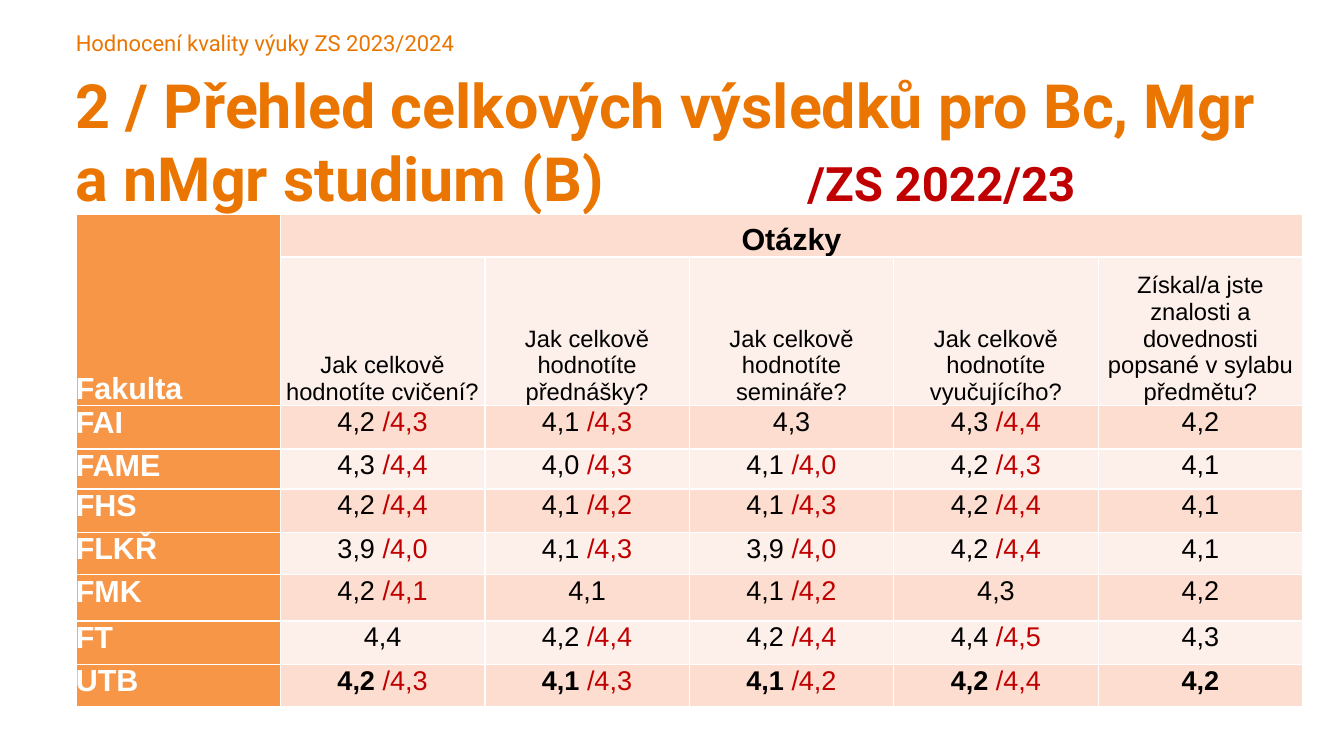
from lxml.etree import SubElement
from pptx import Presentation
from pptx.dml.color import RGBColor
from pptx.enum.text import MSO_ANCHOR as Anchor, MSO_AUTO_SIZE as AutoSize, PP_ALIGN as Align
from pptx.oxml.ns import qn
from pptx.util import Cm, Pt

ORANGE = RGBColor(0xEA, 0x75, 0x00)
RED = RGBColor(0xC0, 0x00, 0x00)
BLACK = RGBColor(0x00, 0x00, 0x00)
WHITE = RGBColor(0xFF, 0xFF, 0xFF)
HEAD_FILL = RGBColor(0xF7, 0x96, 0x46)
DARK_BAND = RGBColor(0xFC, 0xDD, 0xCF)
LIGHT_BAND = RGBColor(0xFD, 0xEF, 0xE9)

LEFT = 1.58
TEXT_WIDTH = 25.2
TABLE_TOP = 4.47
COLUMN_WIDTH = 4.26
ROW_HEIGHTS = [0.88, 3.1, 0.9, 0.84, 0.9, 0.88, 0.97, 0.9, 0.88]

QUESTIONS = [
    "Jak celkově hodnotíte cvičení?",
    "Jak celkově hodnotíte přednášky?",
    "Jak celkově hodnotíte semináře?",
    "Jak celkově hodnotíte vyučujícího?",
    "Získal/a jste znalosti a dovednosti popsané v sylabu předmětu?",
]
# Current mark, then the mark of the previous year
RESULTS = {
    "FAI": ["4,2 /4,3", "4,1 /4,3", "4,3", "4,3 /4,4", "4,2"],
    "FAME": ["4,3 /4,4", "4,0 /4,3", "4,1 /4,0", "4,2 /4,3", "4,1"],
    "FHS": ["4,2 /4,4", "4,1 /4,2", "4,1 /4,3", "4,2 /4,4", "4,1"],
    "FLKŘ": ["3,9 /4,0", "4,1 /4,3", "3,9 /4,0", "4,2 /4,4", "4,1"],
    "FMK": ["4,2 /4,1", "4,1", "4,1 /4,2", "4,3", "4,2"],
    "FT": ["4,4", "4,2 /4,4", "4,2 /4,4", "4,4 /4,5", "4,3"],
    "UTB": ["4,2 /4,3", "4,1 /4,3", "4,1 /4,2", "4,2 /4,4", "4,2"],
}
TOTAL = "UTB"


class SlideBuilder:
    heading_font = "Roboto"
    table_font = "Arial"

    def __init__(self, deck):
        self.page = deck.slides.add_slide(deck.slide_layouts[5])

    def style(self, span, font, size, color, bold=False):
        span.font.name = font
        span.font.size = Pt(size)
        span.font.color.rgb = color
        span.font.bold = bold

    def place(self, box, top, height):
        box.left, box.top = Cm(LEFT), Cm(top)
        box.width, box.height = Cm(TEXT_WIDTH), Cm(height)
        frame = box.text_frame
        frame.margin_left = frame.margin_top = frame.margin_right = frame.margin_bottom = 0
        frame.word_wrap = True
        frame.auto_size = AutoSize.NONE
        frame.vertical_anchor = Anchor.TOP
        return frame.paragraphs[0]

    def label(self, text, top, height):
        para = self.place(self.page.shapes.add_textbox(0, 0, 0, 0), top, height)
        para.text = text
        self.style(para.runs[0], self.heading_font, 13, ORANGE)

    def title(self, text, suffix, top, height, tab_stops):
        para = self.place(self.page.shapes.title, top, height)
        para.text = text
        para.alignment = Align.LEFT
        para.add_run().text = suffix
        self.style(para.runs[0], self.heading_font, 36, ORANGE, True)
        self.style(para.runs[1], self.heading_font, 28, RED, True)
        stops = SubElement(para._p.get_or_add_pPr(), qn("a:tabLst"))
        for stop in tab_stops:
            SubElement(stops, qn("a:tab"), pos=str(Cm(stop)), algn="l")

    def table(self, rows, columns):
        frame = self.page.shapes.add_table(
            rows, columns, Cm(LEFT), Cm(TABLE_TOP),
            Cm(COLUMN_WIDTH * columns), Cm(sum(ROW_HEIGHTS)))
        grid = frame.table
        grid.first_row = grid.horz_banding = False
        for column in grid.columns:
            column.width = Cm(COLUMN_WIDTH)
        for row, height in zip(grid.rows, ROW_HEIGHTS):
            row.height = Cm(height)
        for cell in grid.iter_cells():
            cell.margin_left = cell.margin_top = cell.margin_right = cell.margin_bottom = 0
            self.border(cell)
        return grid

    def border(self, cell):
        properties = cell._tc.get_or_add_tcPr()
        for side in ("lnL", "lnR", "lnT", "lnB"):
            line = SubElement(properties, qn("a:" + side), w=str(Pt(1)))
            fill = SubElement(line, qn("a:solidFill"))
            SubElement(fill, qn("a:srgbClr"), val=str(WHITE))

    def cell(self, cell, text, fill, size, color=BLACK, bold=False,
             align=Align.CENTER, anchor=Anchor.BOTTOM):
        cell.fill.solid()
        cell.fill.fore_color.rgb = fill
        cell.vertical_anchor = anchor
        para = cell.text_frame.paragraphs[0]
        para.text = text
        para.alignment = align
        self.style(para.runs[0], self.table_font, size, color, bold)
        return para

    def mark(self, cell, text, fill, bold):
        current, _, previous = text.partition(" ")
        cell.margin_left = cell.margin_top = cell.margin_right = Cm(0.03)
        para = self.cell(cell, current, fill, 16, bold=bold, anchor=Anchor.TOP)
        if previous:
            span = para.add_run()
            span.text = " " + previous
            self.style(span, self.table_font, 16, RED)


def main():
    deck = Presentation()
    deck.slide_width, deck.slide_height = Cm(28), Cm(15.75)
    slide = SlideBuilder(deck)

    # Headings
    slide.label("Hodnocení kvality výuky ZS 2023/2024", 0.61, 0.56)
    slide.title("2 / Přehled celkových výsledků pro Bc, Mgr a nMgr studium (B)\t\t",
                "/ZS 2022/23", 1.4, 4.62, (12.7, 15.24))

    # Table header
    grid = slide.table(len(ROW_HEIGHTS), len(QUESTIONS) + 1)
    grid.cell(0, 0).merge(grid.cell(1, 0))
    grid.cell(0, 1).merge(grid.cell(0, len(QUESTIONS)))
    slide.cell(grid.cell(0, 0), "Fakulta", HEAD_FILL, 18, WHITE, True, Align.LEFT)
    slide.cell(grid.cell(0, 1), "Otázky", DARK_BAND, 18, bold=True)
    for column, question in enumerate(QUESTIONS, 1):
        slide.cell(grid.cell(1, column), question, LIGHT_BAND, 14)

    # Faculty results
    for row, (faculty, marks) in enumerate(RESULTS.items(), 2):
        slide.cell(grid.cell(row, 0), faculty, HEAD_FILL, 18, WHITE, True,
                   Align.LEFT, Anchor.TOP)
        band = LIGHT_BAND if row % 2 else DARK_BAND
        for column, mark in enumerate(marks, 1):
            slide.mark(grid.cell(row, column), mark, band, faculty == TOTAL)

    deck.save("out.pptx")


if __name__ == "__main__":
    main()
